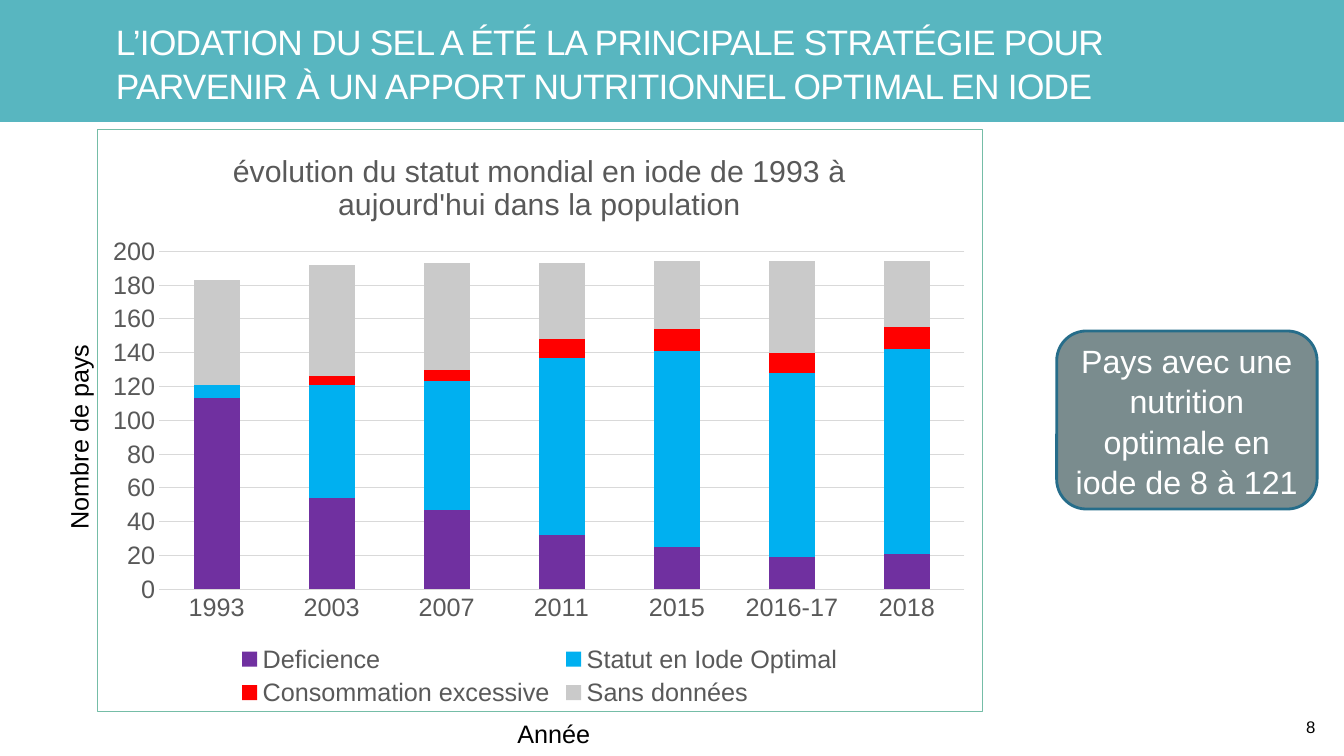
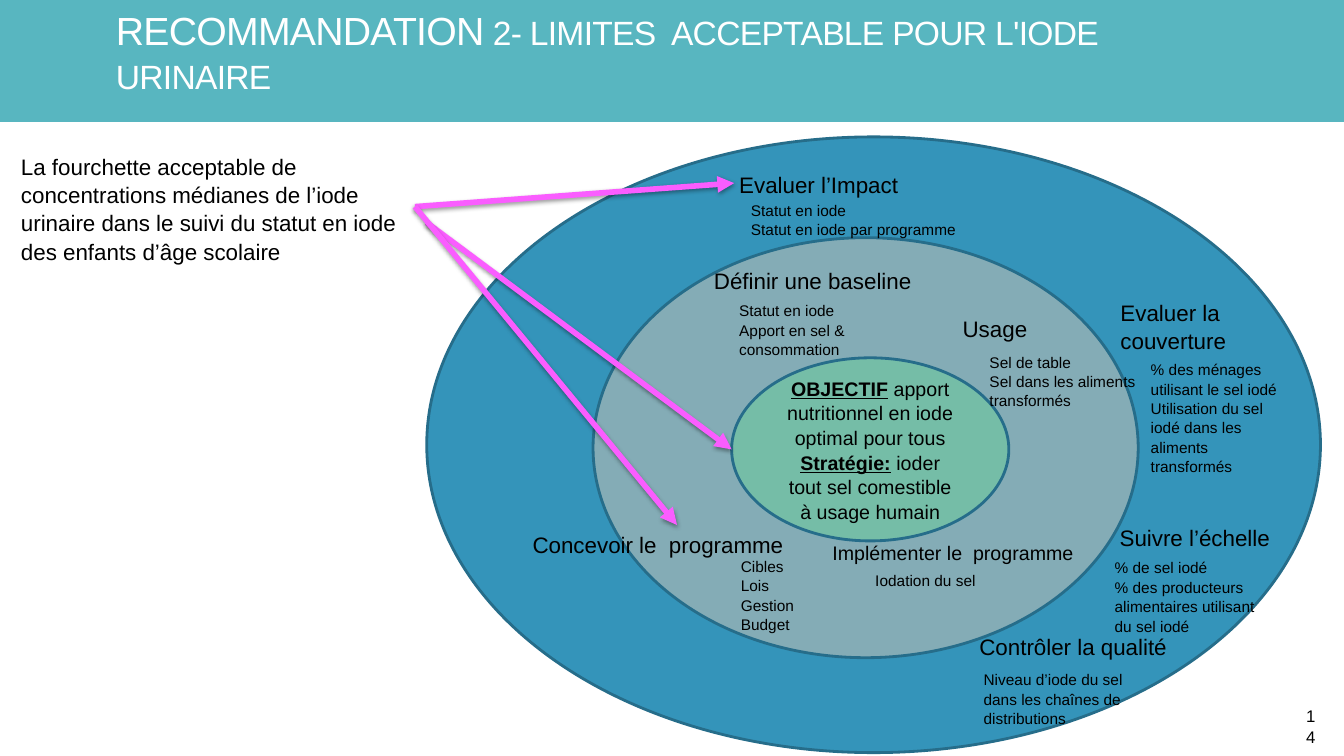
from lxml.etree import SubElement
from pptx import Presentation
from pptx.chart.data import CategoryChartData
from pptx.dml.color import RGBColor
from pptx.enum.chart import XL_CHART_TYPE, XL_LEGEND_POSITION, XL_TICK_MARK
from pptx.enum.shapes import MSO_CONNECTOR, MSO_SHAPE
from pptx.enum.text import MSO_ANCHOR, PP_ALIGN
from pptx.oxml import parse_xml
from pptx.oxml.ns import nsdecls, qn
from pptx.util import Inches, Pt

COLUMNS, ROWS = 160, 90
FONT = "Arial"
LINE_SPACING = 1.05
FONT_HEIGHT = 1.15
INSET = 0.05
COLORS = {
    "band": "58B6C0", "white": "FFFFFF", "black": "000000",
    "outline": "266D8A", "callout": "7A8C8E",
    "outer": "3494BA", "middle": "84ACB6", "core": "75BDA7",
    "arrow": "FA5DFF", "axis": "595959", "grid": "D9D9D9",
    "deficient": "7030A0", "optimal": "00B0F0",
    "excess": "FF0000", "unknown": "CACACA",
}


def rgb(name):
    return RGBColor.from_string(COLORS[name])


def style_font(font, size, color, bold=False, underline=False):
    font.name, font.size = FONT, Pt(size)
    font.bold, font.underline = bold, underline
    font.color.rgb = rgb(color)


def write(frame, paragraphs, size=16, color="black", align=PP_ALIGN.LEFT,
          anchor=MSO_ANCHOR.TOP, inset=INSET, tracking=0):
    """Fill a frame; a paragraph is a string or a list of (text, font changes)."""
    frame.word_wrap = True
    frame.vertical_anchor = anchor
    frame.margin_left = frame.margin_right = Inches(inset)
    frame.margin_top = frame.margin_bottom = Inches(min(inset, INSET))
    for index, content in enumerate(paragraphs):
        paragraph = frame.add_paragraph() if index else frame.paragraphs[0]
        paragraph.alignment = align
        paragraph.line_spacing = LINE_SPACING
        runs = [(content, {})] if isinstance(content, str) else content
        for text, changes in runs:
            run = paragraph.add_run()
            run.text = text
            style_font(run.font, **{"size": size, "color": color, **changes})
            if tracking:
                run.font._element.set("spc", str(round(tracking * 100)))


class Deck:
    """Style and current slide; lengths are columns and rows of the grid."""

    def __init__(self):
        self.show = Presentation()
        self.show.slide_width = Inches(13 + 1 / 3)
        self.show.slide_height = Inches(7.5)
        self.column = self.show.slide_width / COLUMNS
        self.row = self.show.slide_height / ROWS

    def place(self, left, top, width, height):
        return (round(left * self.column), round(top * self.row),
                round(width * self.column), round(height * self.row))

    def start_slide(self, title, number, title_top=1.8, title_size=25.2):
        blank = self.show.slide_layouts[6]
        self.shapes = self.show.slides.add_slide(blank).shapes
        self.shape(MSO_SHAPE.RECTANGLE, (0, 0, COLUMNS, 14.5), "band")
        heading = self.shapes.add_textbox(*self.place(13.8, title_top, 132.2, 10.9))
        write(heading.text_frame, [title], size=title_size, color="white",
              anchor=MSO_ANCHOR.BOTTOM, inset=0, tracking=-0.5)
        self.text([str(number)], 154.8, 84.6, 2.4, size=12,
                  align=PP_ALIGN.RIGHT, anchor=MSO_ANCHOR.MIDDLE)

    def shape(self, kind, box, fill, outline=None, paragraphs=(), **text_format):
        shape = self.shapes.add_shape(kind, *self.place(*box))
        shape.shadow.inherit = False
        shape.fill.solid()
        shape.fill.fore_color.rgb = rgb(fill)
        if outline:
            shape.line.color.rgb = rgb(outline)
            shape.line.width = Pt(2)
        else:
            shape.line.fill.background()
        if paragraphs:
            write(shape.text_frame, paragraphs, align=PP_ALIGN.CENTER,
                  anchor=MSO_ANCHOR.MIDDLE, inset=0.1, **text_format)

    def text(self, paragraphs, left, top, width, lines=1, size=16, rotation=0,
             **text_format):
        """Add a text box as high as the given number of lines."""
        line_height = Pt(size) * FONT_HEIGHT * LINE_SPACING
        height = (lines * line_height + 2 * Inches(INSET)) / self.row
        box = self.shapes.add_textbox(*self.place(left, top, width, height))
        box.rotation = rotation
        write(box.text_frame, paragraphs, size=size, **text_format)

    def arrow(self, start, end):
        ends = self.place(*start, *end)
        arrow = self.shapes.add_connector(MSO_CONNECTOR.STRAIGHT, *ends)
        arrow.line.color.rgb = rgb("arrow")
        arrow.line.width = Pt(4)
        SubElement(arrow.line._get_or_add_ln(), qn("a:tailEnd"), type="triangle")
        arrow._element.spPr.append(parse_xml(
            f'<a:effectLst {nsdecls("a")}>'
            '<a:outerShdw blurRad="38100" dist="20320" dir="5400000" rotWithShape="0">'
            f'<a:srgbClr val="{COLORS["black"]}"><a:alpha val="38000"/></a:srgbClr>'
            '</a:outerShdw></a:effectLst>'))

    def stacked_columns(self, box, title, categories, series):
        data = CategoryChartData()
        data.categories = categories
        for name, _, values in series:
            data.add_series(name, values)
        chart = self.shapes.add_chart(
            XL_CHART_TYPE.COLUMN_STACKED, *self.place(*box), data).chart
        style_font(chart.font, 18, "black")

        chart.has_title = True
        heading = chart.chart_title.text_frame
        heading.text = title
        style_font(heading.paragraphs[0].runs[0].font, 21.6, "axis")
        chart.chart_title.include_in_layout = False

        chart.has_legend = True
        chart.legend.position = XL_LEGEND_POSITION.BOTTOM
        chart.legend.include_in_layout = False
        style_font(chart.legend.font, 18, "axis")

        years, countries = chart.category_axis, chart.value_axis
        for axis in (years, countries):
            axis.major_tick_mark = axis.minor_tick_mark = XL_TICK_MARK.NONE
            style_font(axis.tick_labels.font, 18, "axis")
        countries.minimum_scale, countries.maximum_scale = 0, 200
        countries.major_unit = 20
        countries.format.line.fill.background()
        countries.has_major_gridlines = True
        for line in (years.format.line, countries.major_gridlines.format.line):
            line.color.rgb = rgb("grid")
            line.width = Pt(0.75)

        plot = chart.plots[0]
        plot.gap_width, plot.overlap = 150, 100
        plot.vary_by_categories = False
        for column, (_, color, _) in zip(plot.series, series):
            column.format.fill.solid()
            column.format.fill.fore_color.rgb = rgb(color)
        self.frame_chart(chart, x=0.07, y=0.21, w=0.91, h=0.58)

    def frame_chart(self, chart, **shares):
        """Give the chart a border and its plot area shares of the chart."""
        root = chart.element.find(qn("c:chart"))
        root.addnext(parse_xml(
            f'<c:spPr {nsdecls("c", "a")}><a:noFill/><a:ln w="{Pt(0.75)}"><a:solidFill>'
            f'<a:srgbClr val="{COLORS["core"]}"/></a:solidFill></a:ln></c:spPr>'))
        area = root.find(qn("c:plotArea"))
        for automatic in area.findall(qn("c:layout")):
            area.remove(automatic)
        values = "".join(f'<c:{key} val="{share}"/>' for key, share in shares.items())
        area.insert(0, parse_xml(
            f'<c:layout {nsdecls("c")}><c:manualLayout><c:layoutTarget val="inner"/>'
            f'<c:xMode val="edge"/><c:yMode val="edge"/>{values}'
            '</c:manualLayout></c:layout>'))


IODINE_STATUS = [
    ("Deficience", "deficient", (113, 54, 47, 32, 25, 19, 21)),
    ("Statut en Iode Optimal", "optimal", (8, 67, 76, 105, 116, 109, 121)),
    ("Consommation excessive", "excess", (0, 5, 7, 11, 13, 12, 13)),
    ("Sans données", "unknown", (62, 66, 63, 45, 40, 54, 39)),
]

RINGS = [
    ((50.8, 16.3, 106.4, 73.3), "outer"),
    ((70.6, 28.3, 64.9, 50), "middle"),
]

# Each step: heading, its (left, top, width, lines, size), details, their
# (left, top, width, lines).
STEPS = [
    ("Définir une baseline", (84.4, 31.1, 30, 1, 16),
     ["Statut en iode", "Apport en sel & consommation"], (87.4, 35.2, 19.9, 3)),
    ("Concevoir le  programme", (62.8, 62.5, 35.8, 1, 16),
     ["Cibles", "Lois", "Gestion", "Budget"], (87.6, 65.6, 17.3, 4)),
    ("Implémenter le  programme", (98.5, 63.7, 36.8, 1, 14),
     ["Iodation du sel"], (103.6, 67.3, 17.3, 1)),
    ("Usage", (114, 36.8, 23.6, 1, 16),
     ["Sel de table", "Sel dans les aliments transformés"], (117.2, 41.3, 19.1, 3)),
    ("Suivre l’échelle", (132.7, 61.7, 25.7, 1, 16),
     ["% de sel iodé", "% des producteurs alimentaires utilisant du sel iodé"],
     (132.1, 65.8, 19.3, 4)),
    ("Contrôler la qualité", (116, 74.6, 27.6, 1, 16),
     ["Niveau d’iode du sel dans les chaînes de distributions"],
     (116.5, 79.1, 19.7, 3)),
    ("Evaluer la couverture", (132.8, 34.9, 25.7, 2, 16),
     ["% des ménages utilisant le sel iodé",
      "Utilisation du sel iodé dans les aliments transformés"],
     (136.4, 42.2, 17.3, 6)),
    ("Evaluer l’Impact", (87.4, 19.6, 24.8, 1, 16),
     ["Statut en iode", "Statut en iode par programme"], (88.8, 23.2, 29.5, 2)),
]

ARROWS = [
    ((49.4, 24.6), (87.4, 21.8)),
    ((50.8, 26.5), (87.1, 53.5)),
    ((49.4, 24.6), (80.6, 62.5)),
]


def add_status_slide(deck):
    deck.start_slide("L’IODATION DU SEL A ÉTÉ LA PRINCIPALE STRATÉGIE POUR PARVENIR "
                     "À UN APPORT NUTRITIONNEL OPTIMAL EN IODE", 8)
    deck.stacked_columns(
        (11.5, 15.3, 105.5, 69.5),
        "évolution du statut mondial en iode de 1993 à aujourd'hui dans la population",
        ["1993", "2003", "2007", "2011", "2015", "2016-17", "2018"], IODINE_STATUS)
    deck.text(["Nombre de pays"], -6, 46, 30.4, size=18, rotation=270)
    deck.text(["Année"], 61, 84.8, 15.8, size=18)
    deck.shape(MSO_SHAPE.ROUNDED_RECTANGLE, (125.8, 39.4, 31, 21.2), "callout", "outline",
               ["Pays avec une nutrition optimale en iode de 8 à 121"],
               size=23, color="white")


def add_limits_slide(deck):
    deck.start_slide([("RECOMMANDATION", {"size": 28}),
                      (" 2- LIMITES  ACCEPTABLE POUR L'IODE URINAIRE", {})],
                     14, title_top=0.5, title_size=24)
    for box, fill in RINGS:
        deck.shape(MSO_SHAPE.OVAL, box, fill, "outline")
    keyword = {"bold": True, "underline": True}
    deck.shape(
        MSO_SHAPE.OVAL, (87.1, 42.6, 33, 21.8), "core", "outline",
        [[("OBJECTIF", keyword), (" apport nutritionnel en iode optimal pour tous", {})],
         [("Stratégie:", keyword), (" ioder tout sel comestible à usage humain", {})]],
        size=14)
    for heading, (*heading_box, size), details, details_box in STEPS:
        deck.text([heading], *heading_box, size=size)
        deck.text(details, *details_box, size=11)
    deck.text(["La fourchette acceptable de concentrations médianes de l’iode urinaire "
               "dans le suivi du statut en iode des enfants d’âge scolaire"],
              1.9, 17.5, 47.5, lines=4)
    for start, end in ARROWS:
        deck.arrow(start, end)


def main():
    deck = Deck()
    add_status_slide(deck)
    add_limits_slide(deck)
    deck.show.save("out.pptx")


if __name__ == "__main__":
    main()
